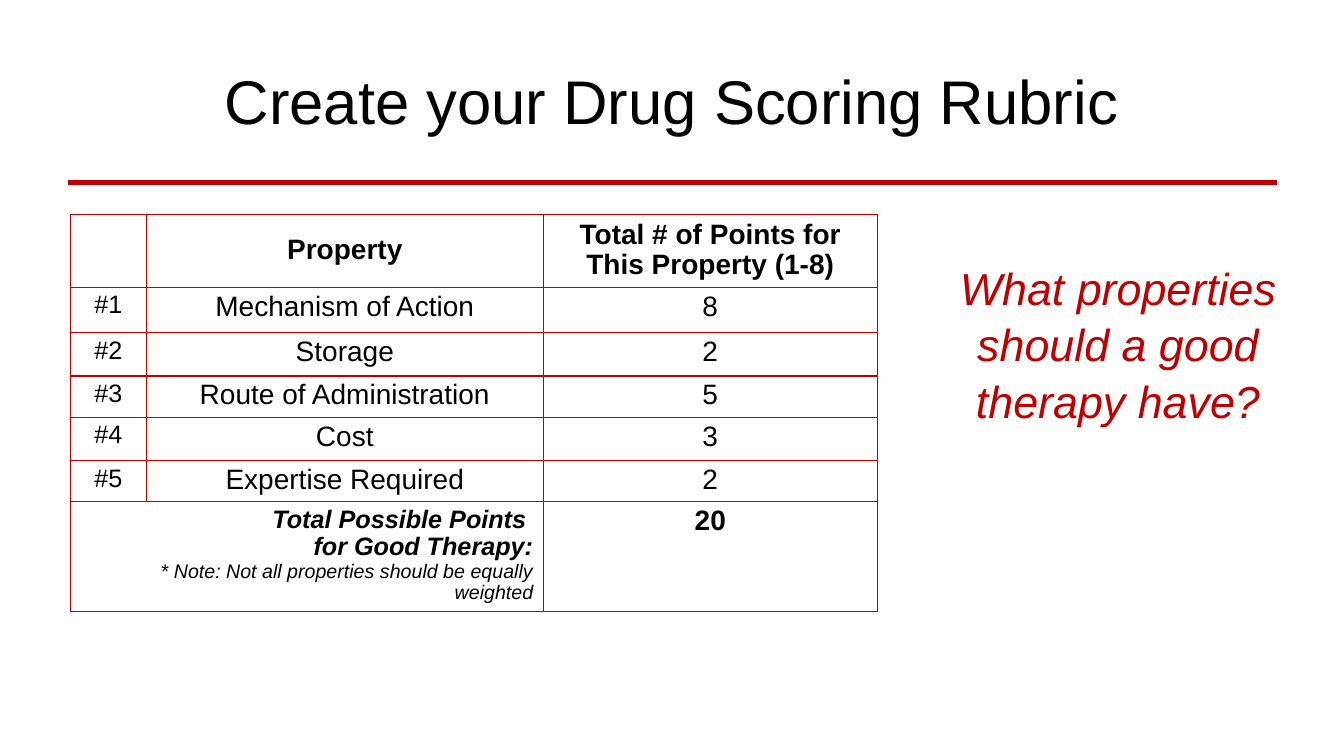
import pptx
import pptx.util
import pptx.dml.color
import pptx.enum.shapes
import pptx.enum.text
import pptx.oxml.ns
import lxml.etree

Inches = pptx.util.Inches
Pt = pptx.util.Pt
ALIGN = pptx.enum.text.PP_ALIGN
ANCHOR = pptx.enum.text.MSO_ANCHOR
BLACK = "000000"
RED = "C00000"


def color(value):
    return pptx.dml.color.RGBColor.from_string(value)


def write(frame, text, size=20, fill=BLACK, bold=False, italic=False,
          align=ALIGN.CENTER, spacing=1.0, first=True):
    paragraph = frame.paragraphs[0] if first else frame.add_paragraph()
    paragraph.alignment = align
    paragraph.line_spacing = spacing
    run = paragraph.add_run()
    run.text = text
    run.font.name = "Arial"
    run.font.size = Pt(size)
    run.font.bold = bold
    run.font.italic = italic
    run.font.color.rgb = color(fill)


def add_element(parent, tag, **attributes):
    return lxml.etree.SubElement(parent, pptx.oxml.ns.qn(tag), **attributes)


class RubricSlide:
    def __init__(self, presentation):
        self.accent = RED
        self.slide = presentation.slides.add_slide(presentation.slide_layouts[5])

    def title(self, text, left, top, width, height):
        shape = self.slide.shapes.title
        shape.left, shape.top = Inches(left), Inches(top)
        shape.width, shape.height = Inches(width), Inches(height)
        shape.text_frame.vertical_anchor = ANCHOR.MIDDLE
        write(shape.text_frame, text, size=44)

    def rule(self, left, right, top, weight):
        connector = self.slide.shapes.add_connector(
            pptx.enum.shapes.MSO_CONNECTOR.STRAIGHT,
            Inches(left), Inches(top), Inches(right), Inches(top))
        connector.line.color.rgb = color(self.accent)
        connector.line.width = Pt(weight)
        add_element(connector._element.spPr, "a:effectLst")

    def question(self, text, left, top, width, height):
        shape = self.slide.shapes.add_textbox(
            Inches(left), Inches(top), Inches(width), Inches(height))
        shape.text_frame.word_wrap = True
        write(shape.text_frame, text, size=32, fill=self.accent,
              italic=True, spacing=1.05)

    def table(self, left, top, widths, heights):
        table = self.slide.shapes.add_table(
            len(heights), len(widths), Inches(left), Inches(top),
            Inches(sum(widths)), Inches(sum(heights))).table
        table.first_row = table.horz_banding = False
        for column, width in zip(table.columns, widths):
            column.width = Inches(width)
        for row, height in zip(table.rows, heights):
            row.height = Inches(height)
        for cell in table.iter_cells():
            self.border(cell)
            cell.fill.background()
        return table

    def border(self, cell):
        properties = cell._tc.get_or_add_tcPr()
        for side in ("a:lnL", "a:lnR", "a:lnT", "a:lnB"):
            line = add_element(properties, side, w=str(Pt(1)))
            fill = add_element(line, "a:solidFill")
            add_element(fill, "a:srgbClr", val=self.accent)

    def cell(self, cell, text, **style):
        write(cell.text_frame, text, spacing=0.96, **style)


def main():
    presentation = pptx.Presentation()
    presentation.slide_width = Inches(13.33)
    presentation.slide_height = Inches(7.5)
    rubric = RubricSlide(presentation)
    rubric.rule(0.67, 12.67, 1.81, 3)
    rubric.title("Create your Drug Scoring Rubric", 0.15, 0.55, 13.03, 0.88)

    scores = [("Mechanism of Action", 8), ("Storage", 2),
              ("Route of Administration", 5), ("Cost", 3),
              ("Expertise Required", 2)]
    table = rubric.table(0.7, 2.13, [0.75, 3.94, 3.31],
                         [0.72, 0.45, 0.43, 0.41, 0.43, 0.41, 1.09])
    headings = ["Property", "Total # of Points for This Property (1-8)"]
    for column, heading in enumerate(headings, 1):
        header = table.cell(0, column)
        header.vertical_anchor = ANCHOR.MIDDLE
        rubric.cell(header, heading, bold=True)
    for row, (name, points) in enumerate(scores, 1):
        rubric.cell(table.cell(row, 0), f"#{row}", size=18)
        rubric.cell(table.cell(row, 1), name)
        rubric.cell(table.cell(row, 2), str(points))

    total_row = len(scores) + 1
    total = table.cell(total_row, 0)
    total.merge(table.cell(total_row, 1))
    total_lines = [("Total Possible Points ", 18, True),
                   ("for Good Therapy:", 18, True),
                   ("* Note: Not all properties should be equally weighted", 14, False)]
    for index, (text, size, bold) in enumerate(total_lines):
        rubric.cell(total, text, size=size, bold=bold, italic=True,
                    align=ALIGN.RIGHT, first=index == 0)
    rubric.cell(table.cell(total_row, 2),
                str(sum(points for name, points in scores)), bold=True)

    rubric.question("What properties should a good therapy have?",
                    9.23, 2.51, 3.72, 1.72)
    presentation.save("out.pptx")


if __name__ == "__main__":
    main()
